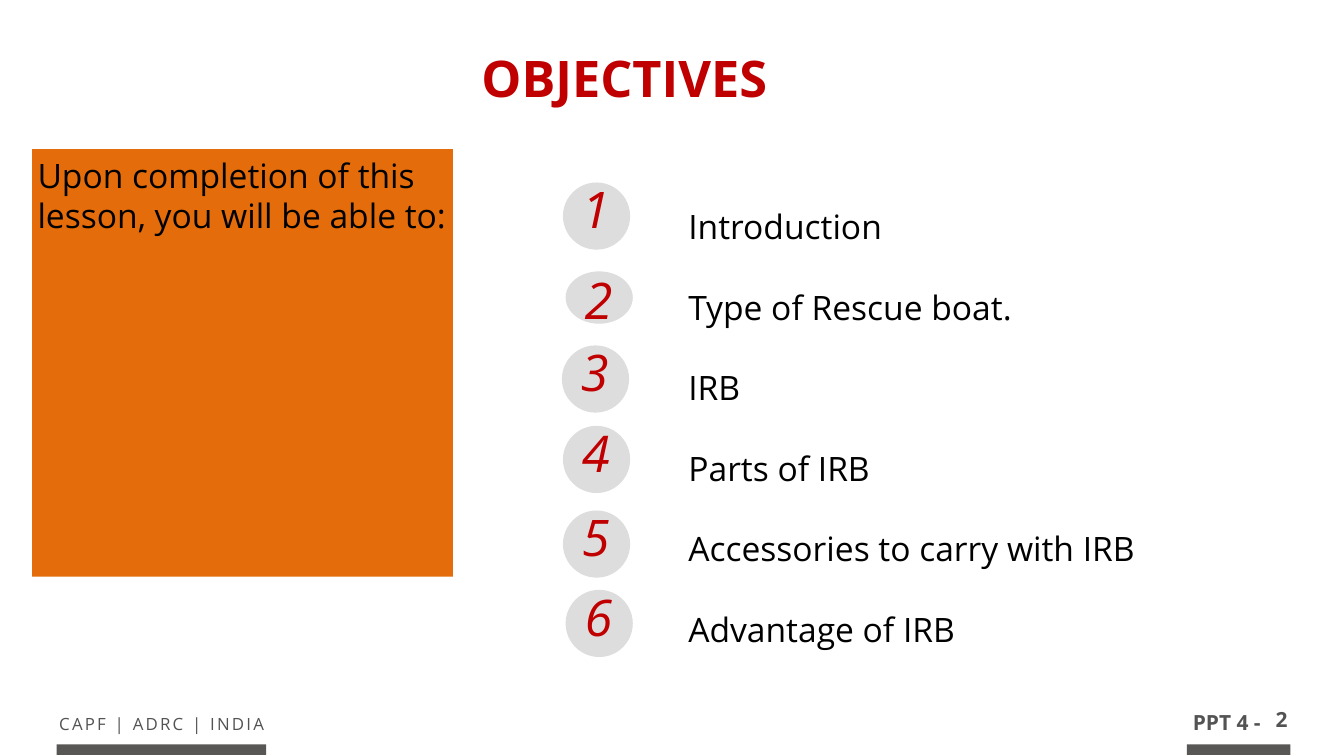
"""Build the lesson objectives slide."""
import pptx
import pptx.util
import pptx.dml.color
import pptx.enum.shapes
import pptx.enum.text

Cm = pptx.util.Cm
Kind = pptx.enum.shapes.MSO_SHAPE
Align = pptx.enum.text.PP_ALIGN

THEME = {
    "font": "Open Sans",
    "ink": "000000", "red": "C00000", "orange": "E46C0A",
    "disc": "DDDDDD", "gray": "535353", "bar": "585756",
    "head": 27, "body": 18, "page": 11.2, "foot": 9,
}
TITLE = "OBJECTIVES"
INTRO = "Upon completion of this lesson, you will be able to:"
GOALS = [
    "Introduction",
    "Type of Rescue boat.",
    "IRB",
    "Parts of IRB",
    "Accessories to carry with IRB",
    "Advantage of IRB",
]
DISCS = [
    (10.64, 3.45, 1.27, 0.16),
    (10.69, 5.13, 0.99, 0.13),
    (10.62, 6.53, 1.27, 0.17),
    (10.64, 8.05, 1.27, 0.16),
    (10.64, 9.65, 1.27, 0.17),
    (10.69, 11.15, 1.27, 0.16),
]
BARS = [(1.07, 3.96), (22.43, 1.96)]
FOOTER = "CAPF | ADRC | INDIA"
LABEL = "PPT 4 -"
PAGE = "2"


def tint(name):
    return pptx.dml.color.RGBColor.from_string(THEME[name])


def draw(home, kind, box, fill):
    shape = home.add_shape(kind, *map(Cm, box))
    shape.shadow.inherit = False
    shape.fill.solid()
    shape.fill.fore_color.rgb = tint(fill)
    shape.line.fill.background()
    return shape


def write(shape, lines, size="body", color="ink", bold=False, slant=False,
          align=Align.LEFT, pad=0.08, left=None, wrap=True, lead=None, track=None):
    frame = shape.text_frame
    frame.word_wrap = wrap
    frame.vertical_anchor = pptx.enum.text.MSO_ANCHOR.TOP
    frame.margin_top = frame.margin_bottom = frame.margin_right = Cm(pad)
    frame.margin_left = Cm(pad if left is None else left)
    for spot, line in enumerate(lines):
        para = frame.add_paragraph() if spot else frame.paragraphs[0]
        para.alignment = align
        if lead:
            para.line_spacing = lead
        run = para.add_run()
        run.text = line
        font = run.font
        font.name = THEME["font"]
        font.size = pptx.util.Pt(THEME[size])
        font.bold, font.italic = bold, slant
        font.color.rgb = tint(color)
        if track:
            run._r.get_or_add_rPr().set("spc", str(track))


def label(home, box, lines, **style):
    write(home.add_textbox(*map(Cm, box)), lines, **style)


def main():
    deck = pptx.Presentation()
    deck.slide_width, deck.slide_height = Cm(25.4), Cm(14.29)
    home = deck.slides.add_slide(deck.slide_layouts[6]).shapes

    for left, width in BARS:
        draw(home, Kind.RECTANGLE, (left, 14.07, width, 0.2), "bar")
    label(home, (0.64, 13.41, 4.83, 0.56), [FOOTER], size="foot",
          color="gray", align=Align.CENTER, track=120)
    label(home, (22.45, 13.34, 1.47, 0.64), [LABEL], size="page",
          color="gray", bold=True, align=Align.CENTER, wrap=False)
    label(home, (23.88, 13.13, 0.58, 0.91), [PAGE], size="page",
          color="gray", bold=True, align=Align.CENTER, pad=0.23)

    panel = draw(home, Kind.RECTANGLE, (0.61, 2.82, 7.95, 8.08), "orange")
    write(panel, [INTRO], pad=0.1)
    label(home, (9.02, 0.81, 5.61, 1.32), [TITLE], size="head",
          color="red", bold=True, wrap=False)
    label(home, (11.66, 3.05, 12.42, 9.17), GOALS, left=1.35, lead=2.0)

    for count, (left, top, high, rise) in enumerate(DISCS, 1):
        group = home.add_group_shape().shapes
        draw(group, Kind.OVAL, (left, top, 1.27, high), "disc")
        label(group, (left + 0.28, top - rise, 0.86, high * 1.38), [str(count)],
              size="head", color="red", slant=True)

    deck.save("out.pptx")


if __name__ == "__main__":
    main()
